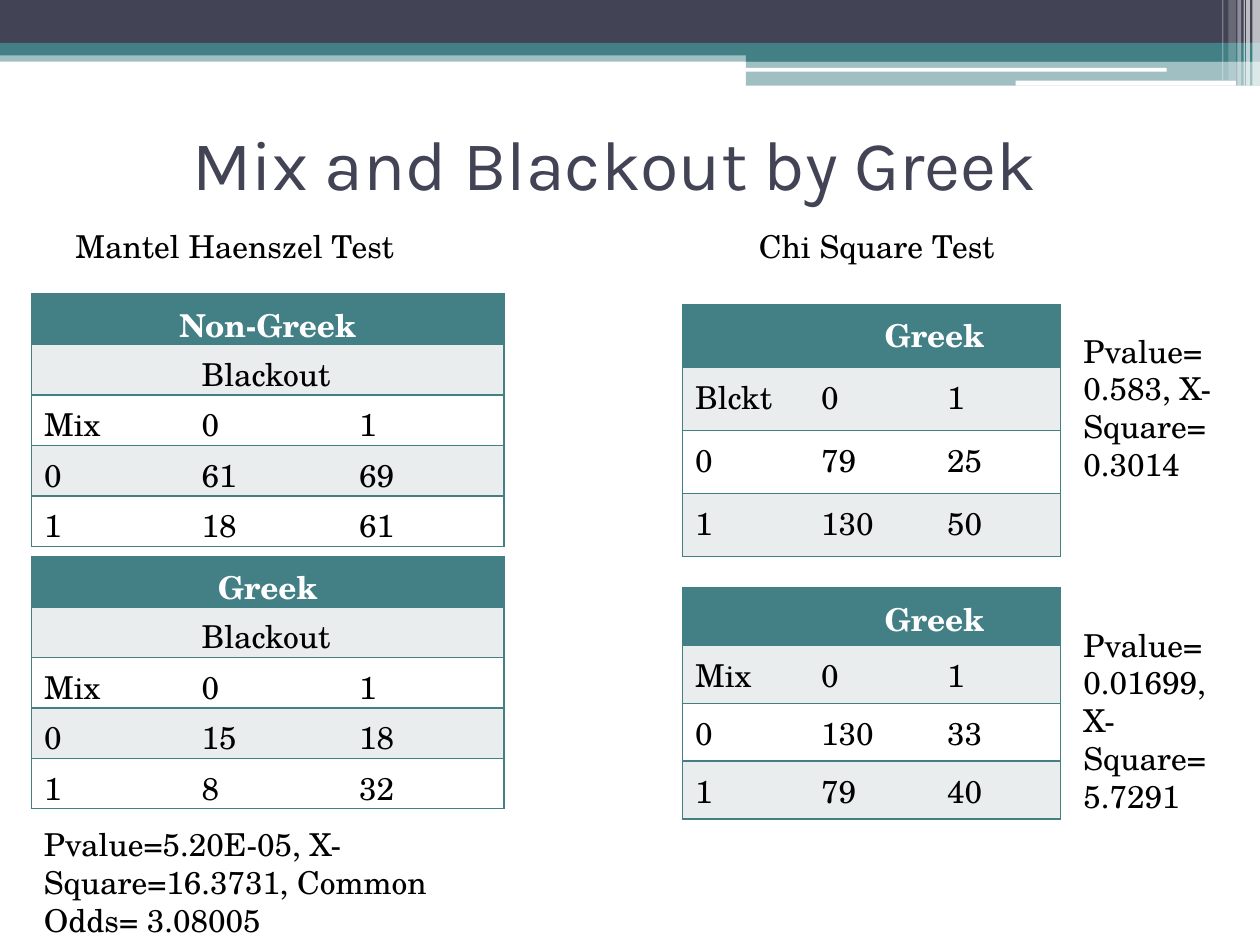
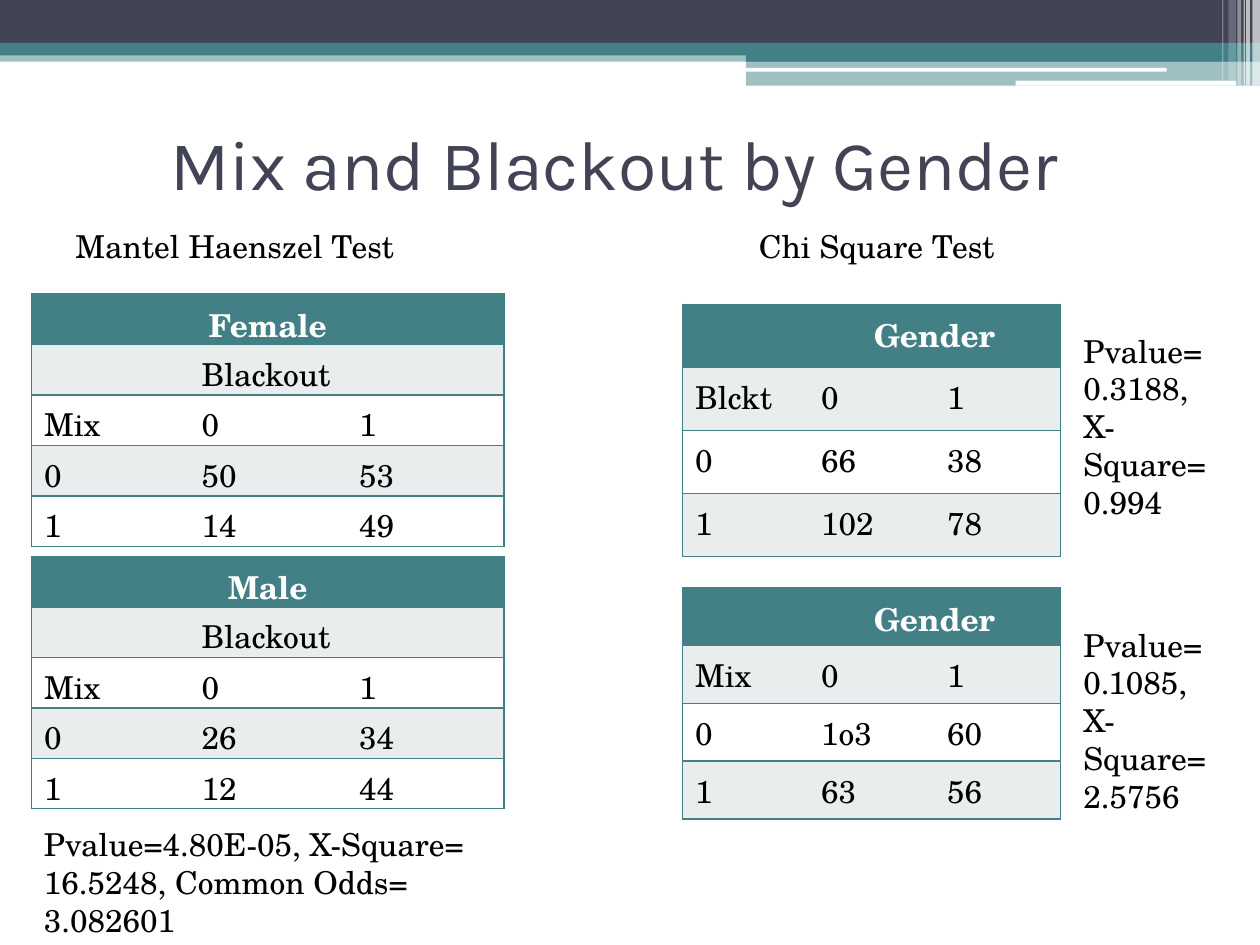
import collections

import pptx
import pptx.dml.color
import pptx.enum.shapes
import pptx.enum.text
import pptx.oxml
import pptx.oxml.ns
import pptx.util

COLUMNS, ROWS = 120, 90
CELL = pptx.util.Inches(10) / COLUMNS
TEAL, NAVY, PALE, WHITE, BLACK = "438086", "424456", "E9EDED", "FFFFFF", "000000"
BODY = {"name": "TeX Gyre Schola", "size": pptx.util.Pt(18), "bold": False}
TABLE_HEAD = {**BODY, "bold": True}
TITLE = {"name": "Karla", "size": pptx.util.Pt(40), "bold": False}
LEFT, CENTER = pptx.enum.text.PP_ALIGN.LEFT, pptx.enum.text.PP_ALIGN.CENTER
RECT = pptx.enum.shapes.MSO_SHAPE.RECTANGLE
ROUND = pptx.enum.shapes.MSO_SHAPE.ROUNDED_RECTANGLE
PLAIN_TABLE = "{2D5ABB26-0587-4C30-8999-92F81FD0307C}"

HEADER_BANDS = [
    (RECT, 0, 58.8, 100, 13.2, TEAL, 50),
    (RECT, 0, 0, 100, 50, NAVY, 100),
    (RECT, 0, 50, 100, 14.7, TEAL, 100),
    (RECT, 59.2, 57.4, 40.8, 14.7, TEAL, 100),
    (RECT, 59.2, 71, 40.8, 29, TEAL, 50),
    (ROUND, 59.1, 79.4, 33.5, 4.4, WHITE, 100),
    (ROUND, 80.6, 94.1, 17.5, 5.9, WHITE, 100),
    (RECT, 99.4, 0, 0.6, 100, WHITE, 65),
    (RECT, 98.9, 0, 0.3, 100, WHITE, 65),
    (RECT, 98.7, 0, 0.1, 100, WHITE, 60),
    (RECT, 98.2, 0, 0.3, 100, WHITE, 40),
    (RECT, 97.5, 0, 0.6, 94, WHITE, 20),
    (RECT, 97, 0, 0.1, 94, WHITE, 30),
]

STUDIES = [
    {
        "title": "Mix and Blackout by Greek",
        "factor": "Greek",
        "strata": [("Non-Greek", ("61", "69"), ("18", "61")),
                   ("Greek", ("15", "18"), ("8", "32"))],
        "mantel": "Pvalue=5.20E-05, X-Square=16.3731, Common Odds= 3.08005",
        "outcomes": [("Blckt", ("79", "25"), ("130", "50")),
                     ("Mix", ("130", "33"), ("79", "40"))],
        "chi": ["Pvalue= 0.583, X-Square= 0.3014",
                "Pvalue= 0.01699, X-Square= 5.7291"],
    },
    {
        "title": "Mix and Blackout by Gender",
        "factor": "Gender",
        "strata": [("Female", ("50", "53"), ("14", "49")),
                   ("Male", ("26", "34"), ("12", "44"))],
        "mantel": "Pvalue=4.80E-05, X-Square= 16.5248, Common Odds= 3.082601",
        "outcomes": [("Blckt", ("66", "38"), ("102", "78")),
                     ("Mix", ("1o3", "60"), ("63", "56"))],
        "chi": ["Pvalue= 0.3188, X-Square= 0.994",
                "Pvalue= 0.1085, X-Square= 2.5756"],
    },
]


class Box(collections.namedtuple("Box", "left top width height")):
    """A region measured in grid columns and rows."""

    def area(self, left, top, width, height):
        """Return a region offset from this one by columns and rows."""
        return Box(self.left + left, self.top + top, width, height)

    def share(self, left, top, width, height):
        """Return a region given in percent of this one."""
        return self.area(left * self.width / 100, top * self.height / 100,
                         width * self.width / 100, height * self.height / 100)

    def lengths(self):
        """Return the region in slide units."""
        return [round(length * CELL) for length in self]


def paint(fill, color):
    """Fill with a solid hex colour."""
    fill.solid()
    fill.fore_color.rgb = pptx.dml.color.RGBColor.from_string(color)


def write(frame, wording, formats, color, align=LEFT):
    """Write one formatted paragraph into a text frame."""
    paragraph = frame.paragraphs[0]
    paragraph.alignment = align
    run = paragraph.add_run()
    run.text = wording
    for name, value in formats.items():
        setattr(run.font, name, value)
    paint(run.font.fill, color)


def add_text(slide, box, wording, formats=BODY, color=BLACK, align=LEFT):
    """Add a wrapping text box that grows with its wording."""
    frame = slide.shapes.add_textbox(*box.lengths()).text_frame
    frame.word_wrap = True
    frame.auto_size = pptx.enum.text.MSO_AUTO_SIZE.SHAPE_TO_FIT_TEXT
    write(frame, wording, formats, color, align)
    return frame


def add_header(slide, box):
    """Draw the layered bands along the top."""
    for outline, left, top, width, height, color, opacity in HEADER_BANDS:
        band = slide.shapes.add_shape(
            outline, *box.share(left, top, width, height).lengths())
        band.shadow.inherit = False
        band.line.fill.background()
        paint(band.fill, color)
        if opacity < 100:
            tint = band.element.spPr.find(".//" + pptx.oxml.ns.qn("a:srgbClr"))
            tint.append(pptx.oxml.parse_xml(
                f'<a:alpha {pptx.oxml.ns.nsdecls("a")} val="{opacity * 1000}"/>'))


def add_title(slide, box, wording):
    """Place the slide title, centred in its box."""
    frame = add_text(slide, box, wording, TITLE, NAVY, CENTER)
    frame.auto_size = pptx.enum.text.MSO_AUTO_SIZE.NONE
    frame.vertical_anchor = pptx.enum.text.MSO_ANCHOR.MIDDLE


def add_borders(cell, sides):
    """Draw teal borders on the named sides of a cell."""
    properties = cell._tc.get_or_add_tcPr()
    for side in sides:
        properties.append(pptx.oxml.parse_xml(
            f'<a:ln{side} {pptx.oxml.ns.nsdecls("a")} w="12700"><a:solidFill>'
            f'<a:srgbClr val="{TEAL}"/></a:solidFill></a:ln{side}>'))


def add_counts(slide, box, lines):
    """Add a banded table in which None continues the cell before it."""
    width = len(lines[0])
    frame = slide.shapes.add_table(len(lines), width, *box.lengths())
    table = frame.table
    frame.element.find(".//" + pptx.oxml.ns.qn("a:tableStyleId")).text = PLAIN_TABLE
    for row, line in enumerate(lines):
        color = TEAL if row == 0 else PALE if row % 2 else WHITE
        for column, wording in enumerate(line):
            cell = table.cell(row, column)
            last = column
            while last + 1 < width and line[last + 1] is None:
                last += 1
            add_borders(cell, "L" * (column == 0) + "R" * (last == width - 1) + "TB")
            paint(cell.fill, color)
            if wording is None:
                continue
            if last > column:
                cell.merge(table.cell(row, last))
            if wording and row == 0:
                write(cell.text_frame, wording, TABLE_HEAD, WHITE, CENTER)
            elif wording:
                write(cell.text_frame, wording, BODY, BLACK)


def add_mantel_panel(slide, box, study):
    """Stack the stratum tables over the Mantel Haenszel result."""
    add_text(slide, box.area(3, 0, 37, 4.8), "Mantel Haenszel Test")
    for index, (stratum, without_mix, with_mix) in enumerate(study["strata"]):
        add_counts(slide, box.area(0, 7 + 25 * index, 45, 24), [
            (stratum, None, None),
            ("", "Blackout", None),
            ("Mix", "0", "1"),
            ("0", *without_mix),
            ("1", *with_mix),
        ])
    add_text(slide, box.area(0, 57, 47, 12), study["mantel"])


def add_chi_panel(slide, box, study):
    """Stack the outcome tables, each with its chi square result beside it."""
    add_text(slide, box.area(0, 0, 41, 4.8), "Chi Square Test", align=CENTER)
    spots = [(8, 24, 10, 16), (35, 22, 38, 15)]
    for outcome, result, spot in zip(study["outcomes"], study["chi"], spots):
        name, negative, positive = outcome
        table_top, table_height, result_top, result_width = spot
        add_counts(slide, box.area(2, table_top, 36, table_height), [
            ("", study["factor"], None),
            (name, "0", "1"),
            ("0", *negative),
            ("1", *positive),
        ])
        add_text(slide, box.area(39, result_top, result_width, 19), result)


def add_study(deck, study):
    """Add the slide of one study."""
    slide = deck.slides.add_slide(deck.slide_layouts[6])
    page = Box(0, 0, COLUMNS, ROWS)
    add_header(slide, page.area(0, 0, COLUMNS, 8.16))
    add_title(slide, page.area(8, 10, 101, 11), study["title"])
    add_mantel_panel(slide, page.area(3, 21, 47, 69), study)
    add_chi_panel(slide, page.area(63, 21, 55, 57), study)


def main():
    """Build and save the deck."""
    deck = pptx.Presentation()
    deck.slide_width = round(COLUMNS * CELL)
    deck.slide_height = round(ROWS * CELL)
    for study in STUDIES:
        add_study(deck, study)
    deck.save("out.pptx")


if __name__ == "__main__":
    main()
